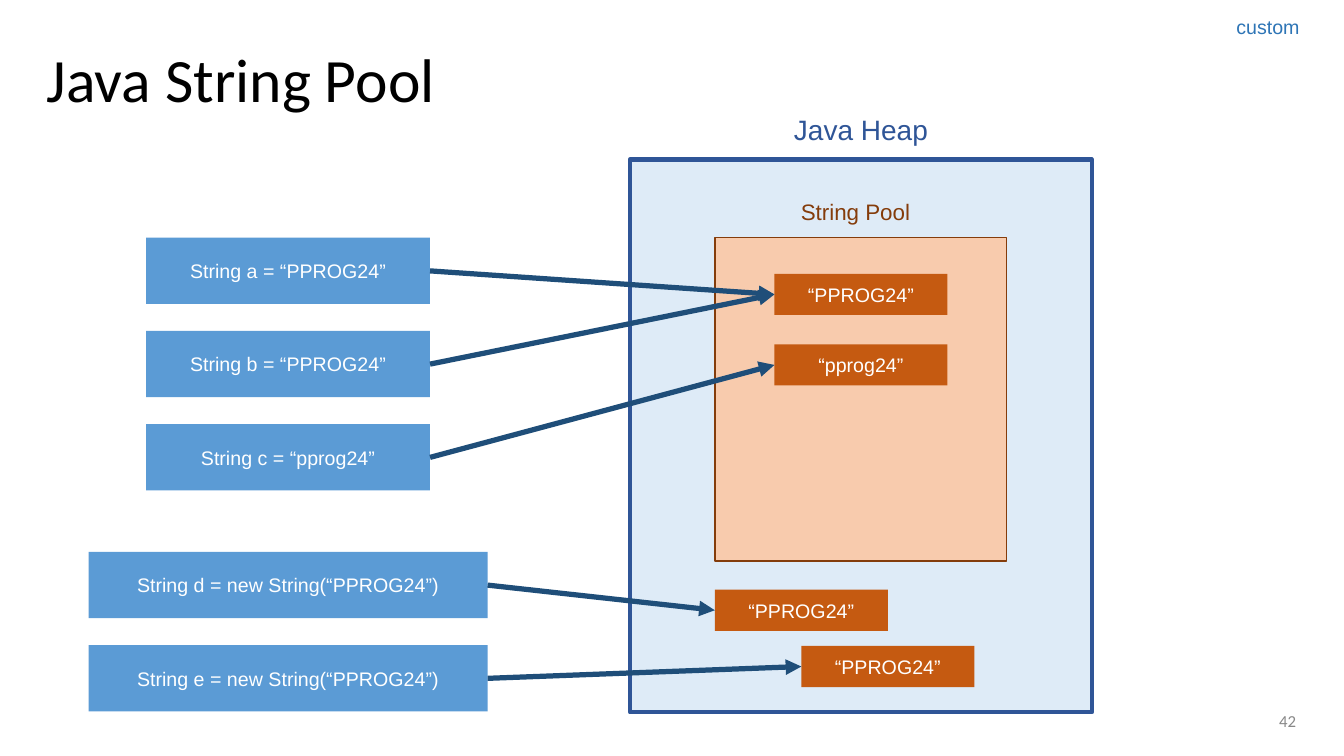
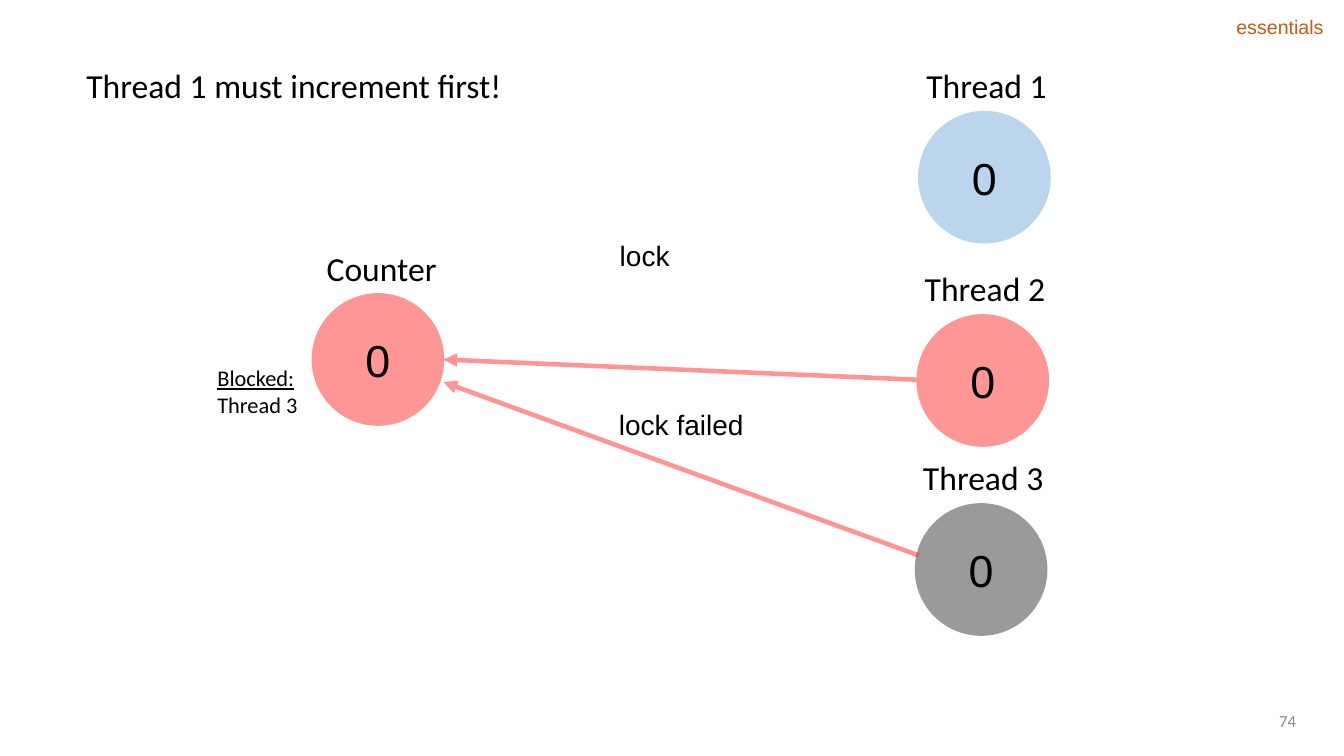
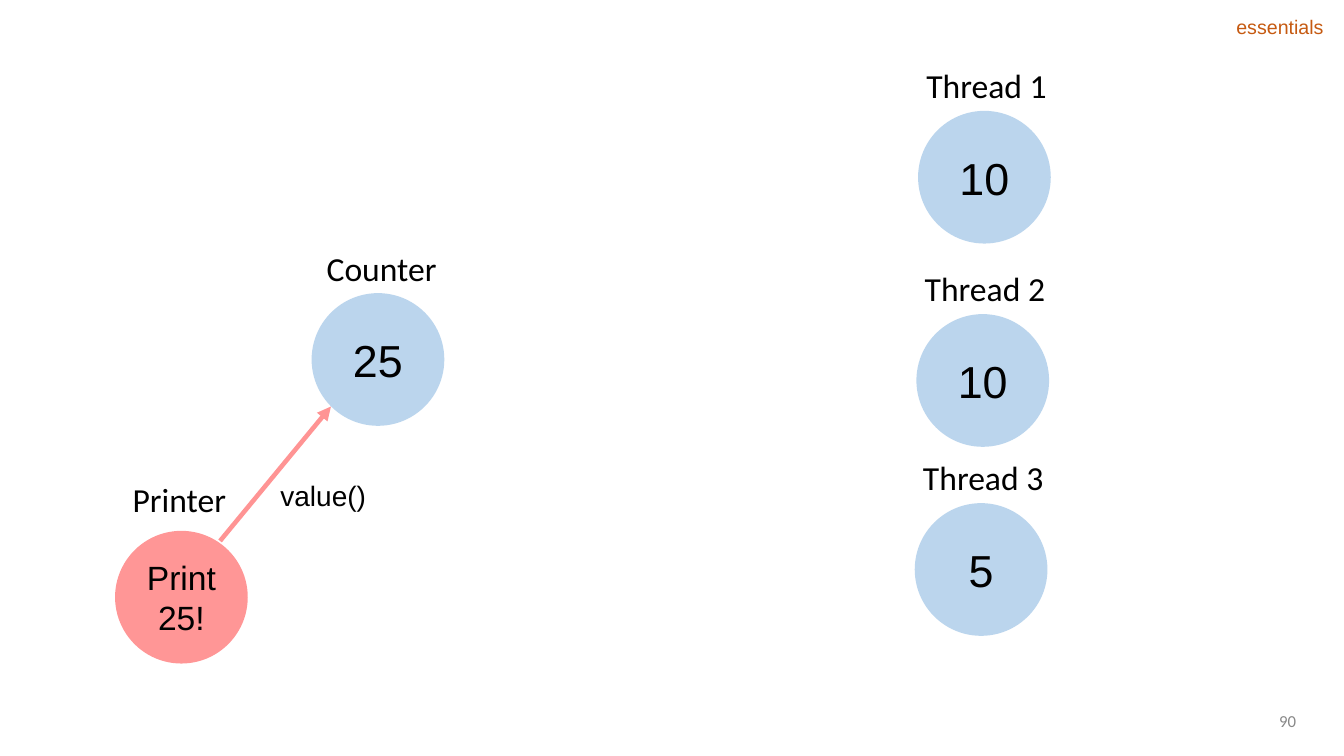
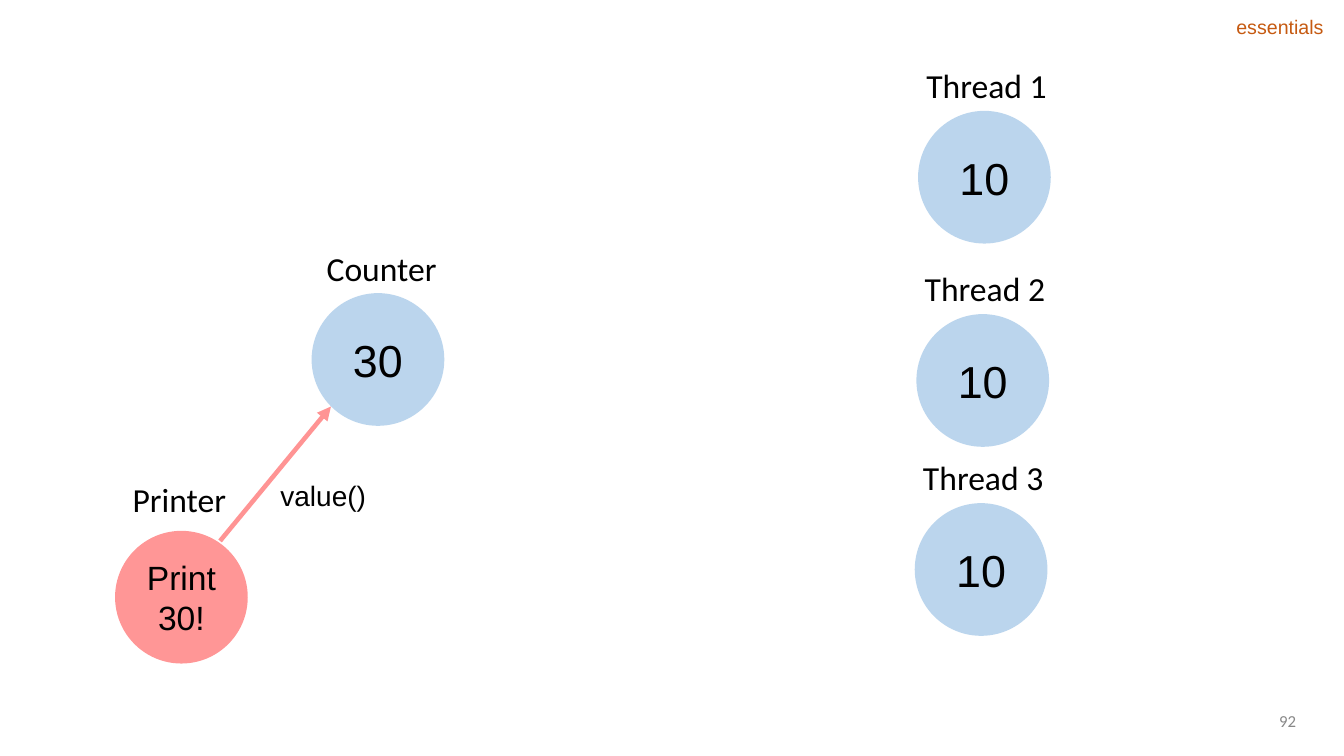
from pptx import Presentation
from pptx.dml.color import RGBColor
from pptx.enum.shapes import MSO_CONNECTOR, MSO_SHAPE
from pptx.enum.text import MSO_ANCHOR as ANCHOR, PP_ALIGN as ALIGN
from pptx.oxml.ns import qn
from pptx.util import Inches, Pt
from lxml.etree import SubElement

COLS, ROWS = 160, 90
CELL = Inches(1 / 12)

BLACK = RGBColor(0x00, 0x00, 0x00)
WHITE = RGBColor(0xFF, 0xFF, 0xFF)
GREY = RGBColor(0x88, 0x88, 0x88)
CHARCOAL = RGBColor(0x0C, 0x0C, 0x0C)
RED = RGBColor(0xFF, 0x00, 0x00)
BLUE = RGBColor(0x5B, 0x9B, 0xD5)
TAG_BLUE = RGBColor(0x2E, 0x75, 0xB6)
NAVY = RGBColor(0x1F, 0x4E, 0x79)
HEAP_LINE = RGBColor(0x2F, 0x55, 0x97)
HEAP_FILL = RGBColor(0xDE, 0xEB, 0xF7)
POOL_LINE = RGBColor(0x84, 0x3C, 0x0B)
POOL_FILL = RGBColor(0xF8, 0xCB, 0xAD)
RUST = RGBColor(0xC5, 0x5A, 0x11)
TAG_RUST = RGBColor(0xC6, 0x5A, 0x11)

BODY, HEAD = "Arial", "Calibri"
DIAMETER = 15.8
COUNTER = (37.1, 34.9)
PRINTER = (13.7, 63.2)
THREADS = ((109.3, 13.2), (109.1, 37.4), (108.9, 59.9))


class Deck:
    """Draws styled elements on the current slide, on a grid of 160 by 90 cells."""

    def __init__(self):
        self.prs = Presentation()
        self.prs.slide_width = COLS * CELL
        self.prs.slide_height = ROWS * CELL
        self.s = None

    def cells(self, *lengths):
        return [round(n * CELL) for n in lengths]

    def fade(self, sp, percent):
        for clr in sp.element.spPr.iter(qn("a:srgbClr")):
            SubElement(clr, qn("a:alpha"), val=str(percent * 1000))

    def fill_text(self, tf, text, size, color, font, align):
        tf.word_wrap = True
        tf.text = text
        for p in tf.paragraphs:
            p.alignment = align
            for r in p.runs:
                r.font.size = Pt(size)
                r.font.name = font
                r.font.color.rgb = color

    def slide(self, number, tag, tag_color):
        self.s = self.prs.slides.add_slide(self.prs.slide_layouts[6])
        self.text(113, 83.4, 42.5, 4.8, str(number), 12, GREY, HEAD,
                  ALIGN.RIGHT, ANCHOR.MIDDLE)
        self.text(146, 1.2, 14, 4.1, tag, 14, tag_color)

    def title(self, text):
        tf = self.text(4.4, 2.4, 151.1, 14.9, text, 44, font=HEAD,
                       anchor=ANCHOR.MIDDLE)
        tf.paragraphs[0].line_spacing = 0.9

    def text(self, x, y, w, h, text, size, color=BLACK, font=BODY,
             align=ALIGN.LEFT, anchor=ANCHOR.TOP):
        tf = self.s.shapes.add_textbox(*self.cells(x, y, w, h)).text_frame
        tf.vertical_anchor = anchor
        self.fill_text(tf, text, size, color, font, align)
        return tf

    def shape(self, kind, x, y, w, h, fill):
        sp = self.s.shapes.add_shape(kind, *self.cells(x, y, w, h))
        sp.shadow.inherit = False
        sp.fill.solid()
        sp.fill.fore_color.rgb = fill
        sp.line.fill.background()
        sp.text_frame.vertical_anchor = ANCHOR.MIDDLE
        return sp

    def frame(self, x, y, w, h, fill, line, width):
        sp = self.shape(MSO_SHAPE.RECTANGLE, x, y, w, h, fill)
        sp.line.color.rgb = line
        sp.line.width = Pt(width)

    def box(self, x, y, w, h, text, fill):
        sp = self.shape(MSO_SHAPE.RECTANGLE, x, y, w, h, fill)
        self.fill_text(sp.text_frame, text, 14, WHITE, BODY, ALIGN.CENTER)

    def node(self, place, label, shift, text, fill=BLUE, size=32):
        x, y = place
        dx, dy = shift
        sp = self.shape(MSO_SHAPE.OVAL, x, y, DIAMETER, DIAMETER, fill)
        self.fade(sp, 41)
        self.fill_text(sp.text_frame, text, size, BLACK, BODY, ALIGN.CENTER)
        self.text(x + dx, y + dy, 16.9, 6, label, 24, font=HEAD)

    def arrow(self, x1, y1, x2, y2, color, width):
        sp = self.s.shapes.add_connector(MSO_CONNECTOR.STRAIGHT,
                                         *self.cells(x1, y1, x2, y2))
        sp.line.color.rgb = color
        sp.line.width = Pt(width)
        props = sp.element.spPr
        SubElement(props.find(qn("a:ln")), qn("a:tailEnd"), type="triangle")
        SubElement(props, qn("a:effectLst"))
        return sp

    def call(self, x1, y1, x2, y2):
        self.fade(self.arrow(x1, y1, x2, y2, RED, 3.25), 42)

    def threads(self, counter, values, counter_fill=BLUE, fills=(BLUE,) * 3):
        self.node(COUNTER, "Counter", (0.6, -6), counter, counter_fill)
        for i, (place, value, fill) in enumerate(zip(THREADS, values, fills), 1):
            self.node(place, f"Thread {i}", (-0.2, -6.1), value, fill)


def string_pool(deck):
    deck.slide(42, "custom", TAG_BLUE)
    deck.title("Java String Pool")
    deck.frame(75, 19, 55, 65.8, HEAP_FILL, HEAP_LINE, 3)
    deck.text(92.5, 12.8, 20, 5.3, "Java Heap", 20, HEAP_LINE, align=ALIGN.CENTER)
    deck.frame(85.1, 28.3, 34.7, 38.5, POOL_FILL, POOL_LINE, 1)
    deck.text(93.8, 23, 16.1, 4.4, "String Pool", 16, POOL_LINE, align=ALIGN.CENTER)

    short, long = 33.8, 47.5
    middle, top, pitch, code_h = 34.3, 28.3, 11.1, 7.9
    value_w, value_h = 20.6, 4.9
    values = {
        "pooled": (92.2, 32.6, "“PPROG24”"),
        "lower": (92.2, 41, "“pprog24”"),
        "first": (85.1, 70.2, "“PPROG24”"),
        "second": (95.4, 76.9, "“PPROG24”"),
    }
    for x, y, text in values.values():
        deck.box(x, y, value_w, value_h, text, RUST)

    declarations = (
        (0, short, "String a = “PPROG24”", "pooled"),
        (1, short, "String b = “PPROG24”", "pooled"),
        (2, short, "String c = “pprog24”", "lower"),
        (3.37, long, "String d = new String(“PPROG24”)", "first"),
        (4.37, long, "String e = new String(“PPROG24”)", "second"),
    )
    for row, w, code, target in declarations:
        y = top + row * pitch
        deck.box(middle - w / 2, y, w, code_h, code, BLUE)
        value_x, value_y, _ = values[target]
        deck.arrow(middle + w / 2, y + code_h / 2,
                   value_x, value_y + value_h / 2, NAVY, 3.75)


def locking(deck):
    deck.slide(74, "essentials", TAG_RUST)
    deck.threads("0", ("0", "0", "0"), RED, (BLUE, RED, CHARCOAL))
    deck.text(9.1, 7.1, 52.7, 6, "Thread 1 must increment first!", 24, font=HEAD)
    deck.call(109.3, 66.1, 52.8, 45.5)
    deck.call(109.1, 45.2, 52.8, 42.8)
    deck.text(72.6, 27.8, 8.4, 5.3, "lock", 20)
    deck.text(72.5, 47.9, 17.4, 5.3, "lock failed", 20)
    tf = deck.text(24.7, 42.8, 12.1, 7.7, "Blocked:\nThread 3", 16, font=HEAD)
    tf.paragraphs[0].runs[0].font.underline = True


def printing(deck, number, total, values):
    deck.slide(number, "essentials", TAG_RUST)
    deck.threads(total, values)
    deck.node(PRINTER, "Printer", (0.9, -6.8), f"Print {total}!", RED, 24)
    deck.call(26.2, 64.4, 39.4, 48.4)
    deck.text(32.2, 56.4, 12.7, 5.3, "value()", 20)


def main():
    deck = Deck()
    string_pool(deck)
    locking(deck)
    printing(deck, 90, "25", ("10", "10", "5"))
    printing(deck, 92, "30", ("10", "10", "10"))
    deck.prs.save("out.pptx")


if __name__ == "__main__":
    main()
